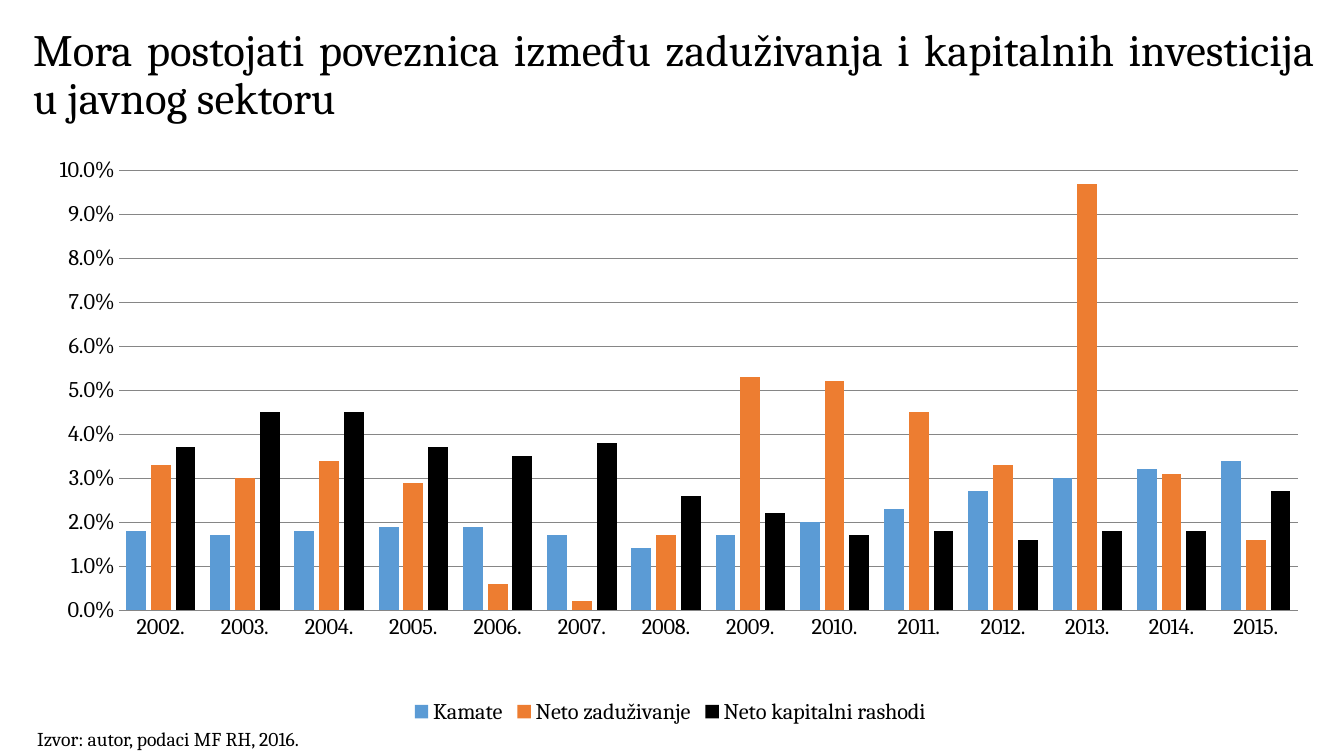
import pptx
import pptx.chart.data
import pptx.dml.color
import pptx.enum.chart
import pptx.enum.text
import pptx.oxml
import pptx.oxml.ns
import pptx.util

Pt = pptx.util.Pt
FONT = "Cambria"
COLORS = {"text": "000000", "grid": "868686", "interest": "5B9BD5",
          "borrowing": "ED7D31", "capital": "000000"}


def rgb(name):
    return pptx.dml.color.RGBColor.from_string(COLORS[name])


def add_text(slide, box, text, size, anchor, align, spacing):
    frame = slide.shapes.add_textbox(*(Pt(length) for length in box)).text_frame
    frame.word_wrap = True
    frame.vertical_anchor = anchor
    paragraph = frame.paragraphs[0]
    paragraph.alignment = align
    paragraph.line_spacing = spacing
    run = paragraph.add_run()
    run.text = text
    run.font.name = FONT
    run.font.size = Pt(size)
    run.font.color.rgb = rgb("text")


presentation = pptx.Presentation()
presentation.slide_width = Pt(960)
presentation.slide_height = Pt(540)
slide = presentation.slides.add_slide(presentation.slide_layouts[6])

# Title
add_text(slide, (16.56, 11.52, 930.24, 85.68),
         "Mora postojati poveznica između zaduživanja i kapitalnih investicija u javnog sektoru",
         32, pptx.enum.text.MSO_ANCHOR.MIDDLE, pptx.enum.text.PP_ALIGN.JUSTIFY, 0.9)

# Chart data, in percent
series_percent = [
    ("Kamate", "interest",
     [1.8, 1.7, 1.8, 1.9, 1.9, 1.7, 1.4, 1.7, 2.0, 2.3, 2.7, 3.0, 3.2, 3.4]),
    ("Neto zaduživanje", "borrowing",
     [3.3, 3.0, 3.4, 2.9, 0.6, 0.2, 1.7, 5.3, 5.2, 4.5, 3.3, 9.7, 3.1, 1.6]),
    ("Neto kapitalni rashodi", "capital",
     [3.7, 4.5, 4.5, 3.7, 3.5, 3.8, 2.6, 2.2, 1.7, 1.8, 1.6, 1.8, 1.8, 2.7]),
]
budget = pptx.chart.data.CategoryChartData(number_format="0.0%")
budget.categories = [f"{year}." for year in range(2002, 2016)]
for name, _, percents in series_percent:
    budget.add_series(name, [round(percent / 100, 3) for percent in percents])

# Column chart
chart = slide.shapes.add_chart(
    pptx.enum.chart.XL_CHART_TYPE.COLUMN_CLUSTERED,
    Pt(19.44), Pt(107.28), Pt(918.72), Pt(413.28), budget).chart
chart.has_title = False
chart.font.name = FONT
chart.font.size = Pt(16)
chart.font.color.rgb = rgb("text")
columns = chart.plots[0]
columns.gap_width = 75
columns.overlap = -25
columns.vary_by_categories = False
for series, (_, color, _) in zip(columns.series, series_percent):
    series.format.fill.solid()
    series.format.fill.fore_color.rgb = rgb(color)
    series.invert_if_negative = False

# Axes and gridlines
years, shares = chart.category_axis, chart.value_axis
for axis in (years, shares):
    axis.major_tick_mark = pptx.enum.chart.XL_TICK_MARK.NONE
    axis.minor_tick_mark = pptx.enum.chart.XL_TICK_MARK.NONE
shares.minimum_scale, shares.maximum_scale, shares.major_unit = 0, 0.1, 0.01
shares.tick_labels.number_format = "0.0%"
shares.tick_labels.number_format_is_linked = False
shares.format.line.fill.background()
shares.has_major_gridlines = True
for line in (years.format.line, shares.major_gridlines.format.line):
    line.color.rgb = rgb("grid")
    line.width = Pt(0.75)

# Legend
chart.has_legend = True
chart.legend.position = pptx.enum.chart.XL_LEGEND_POSITION.BOTTOM
chart.legend.include_in_layout = False

# Inner plot area, as fractions of the chart
plot_area = chart._chartSpace.chart.plotArea
for layout in plot_area.findall(pptx.oxml.ns.qn("c:layout")):
    plot_area.remove(layout)
plot_area.insert(0, pptx.oxml.parse_xml(
    f'<c:layout {pptx.oxml.ns.nsdecls("c")}><c:manualLayout>'
    '<c:layoutTarget val="inner"/><c:xMode val="edge"/><c:yMode val="edge"/>'
    '<c:x val="0.071"/><c:y val="0.035"/><c:w val="0.917"/><c:h val="0.76"/>'
    '</c:manualLayout></c:layout>'))

# Data source
add_text(slide, (19.44, 515.52, 318.24, 24.48), "Izvor: autor, podaci MF RH, 2016.",
         14, pptx.enum.text.MSO_ANCHOR.TOP, pptx.enum.text.PP_ALIGN.LEFT, 1.0)

presentation.save("out.pptx")
